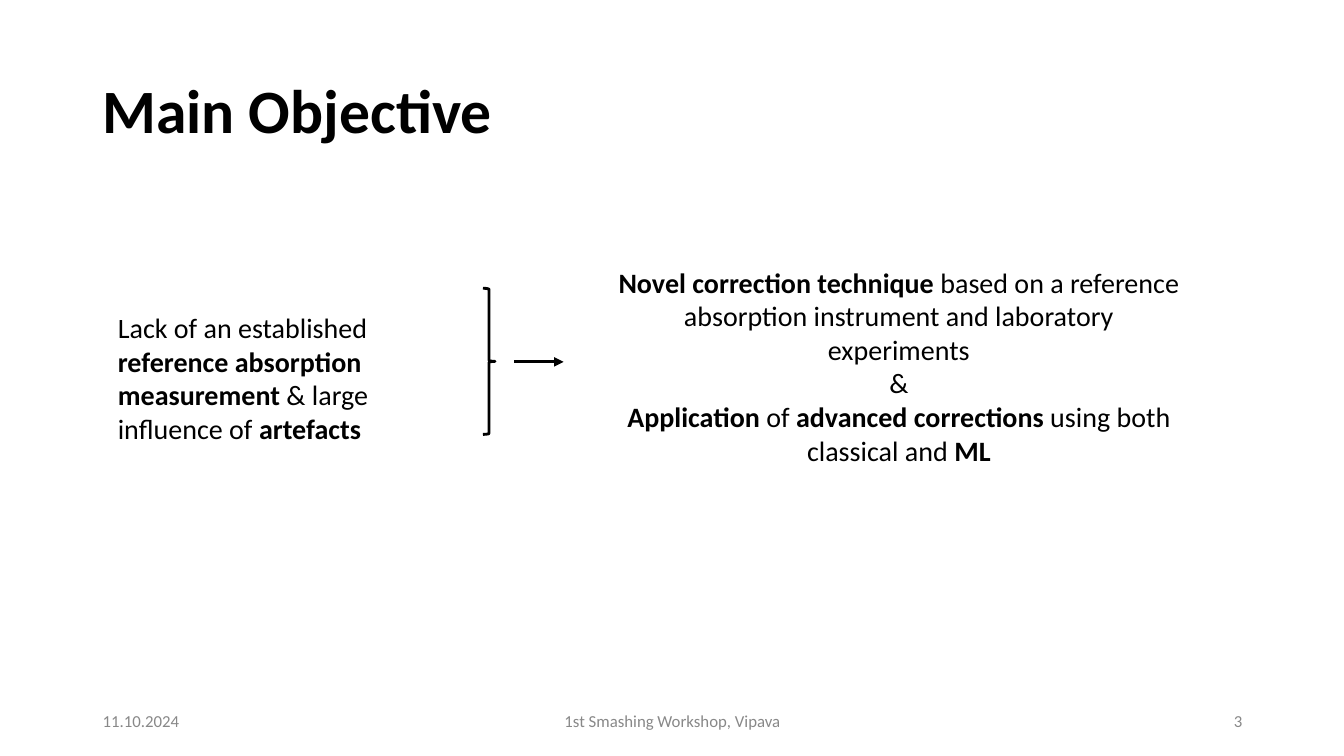
import pptx
import pptx.dml.color
import pptx.enum.shapes
import pptx.enum.text
import pptx.oxml.ns
import pptx.util
from lxml import etree
from pptx.util import Inches

BLACK = pptx.dml.color.RGBColor(0x00, 0x00, 0x00)
GREY = pptx.dml.color.RGBColor(0x88, 0x88, 0x88)
FONT = "Calibri"
ALIGN = pptx.enum.text.PP_ALIGN
ANCHOR = pptx.enum.text.MSO_ANCHOR
FOOTER_TOP, FOOTER_HEIGHT = 6.95, 0.4


def add_text(slide, box, paragraphs, size=20, color=BLACK, align=ALIGN.LEFT,
             anchor=ANCHOR.TOP, line_spacing=None, margin_right=0.1):
    shape = slide.shapes.add_textbox(*map(Inches, box))
    frame = shape.text_frame
    frame.word_wrap = True
    frame.vertical_anchor = anchor
    frame.margin_right = Inches(margin_right)
    for index, runs in enumerate(paragraphs):
        paragraph = frame.paragraphs[0] if index == 0 else frame.add_paragraph()
        paragraph.alignment = align
        paragraph.line_spacing = line_spacing
        for text, bold in runs:
            run = paragraph.add_run()
            run.text = text
            run.font.name = FONT
            run.font.size = pptx.util.Pt(size)
            run.font.bold = bold
            run.font.color.rgb = color


def add_footer(slide, left, width, text, align):
    add_text(slide, (left, FOOTER_TOP, width, FOOTER_HEIGHT), [[(text, False)]],
             size=12, color=GREY, align=align, anchor=ANCHOR.MIDDLE)


def add_brace(slide, box):
    brace = slide.shapes.add_shape(
        pptx.enum.shapes.MSO_SHAPE.RIGHT_BRACE, *map(Inches, box))
    brace.shadow.inherit = False
    brace.adjustments[0] = 0.083
    brace.adjustments[1] = 0.5
    brace.fill.background()
    brace.line.color.rgb = BLACK
    brace.line.width = pptx.util.Pt(2)


def add_arrow(slide, start, end):
    arrow = slide.shapes.add_connector(
        pptx.enum.shapes.MSO_CONNECTOR.STRAIGHT, *map(Inches, start + end))
    arrow.line.color.rgb = BLACK
    arrow.line.width = pptx.util.Pt(2.25)
    qn = pptx.oxml.ns.qn
    properties = arrow.element.find(qn("p:spPr"))
    etree.SubElement(properties.find(qn("a:ln")), qn("a:tailEnd"), type="triangle")
    etree.SubElement(properties, qn("a:effectLst"))


def main():
    presentation = pptx.Presentation()
    presentation.slide_width = Inches(13.33)
    presentation.slide_height = Inches(7.5)
    slide = presentation.slides.add_slide(presentation.slide_layouts[6])

    add_text(slide, (0.92, 0.4, 11.5, 1.45), [[("Main Objective", True)]],
             size=44, anchor=ANCHOR.MIDDLE, line_spacing=0.9)
    add_text(slide, (1.07, 3.03, 3.78, 1.45), [[
        ("Lack of an established ", False),
        ("reference absorption measurement", True),
        (" & large influence of ", False),
        ("artefacts", True),
    ]], margin_right=0.8)
    add_brace(slide, (4.79, 2.86, 0.12, 1.45))
    add_arrow(slide, (5.1, 3.59), (5.59, 3.59))
    add_text(slide, (6.01, 2.58, 5.81, 2.12), [
        [("Novel correction technique ", True),
         ("based on a reference absorption instrument and laboratory experiments", False)],
        [("&", False)],
        [("Application", True), (" of ", False), ("advanced corrections", True),
         (" using both classical and ", False), ("ML", True)],
    ], align=ALIGN.CENTER)

    add_footer(slide, 0.92, 3, "11.10.2024", ALIGN.LEFT)
    add_footer(slide, 4.42, 4.5, "1st Smashing Workshop, Vipava", ALIGN.CENTER)
    add_footer(slide, 9.42, 3, "3", ALIGN.RIGHT)
    presentation.save("out.pptx")


if __name__ == "__main__":
    main()
